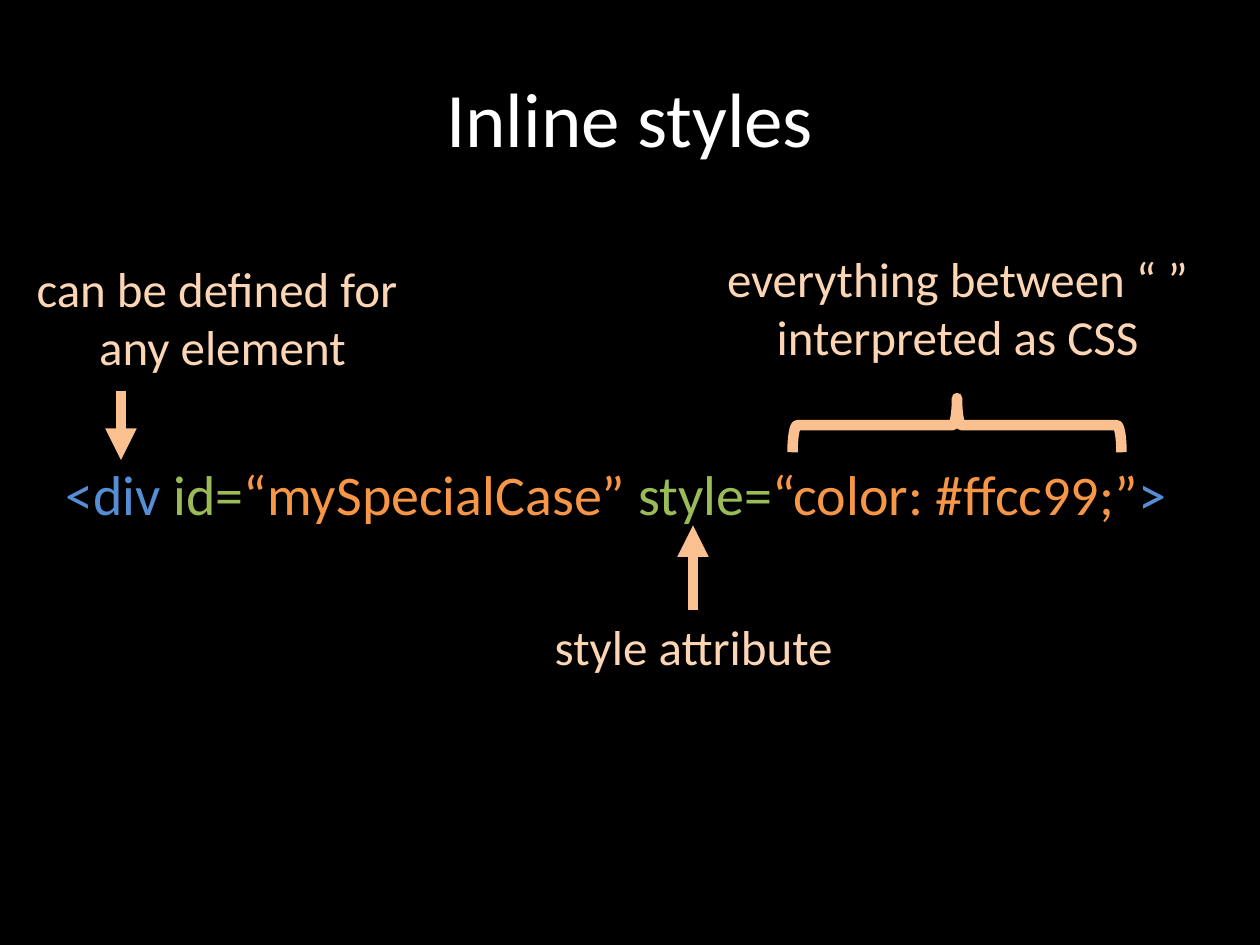
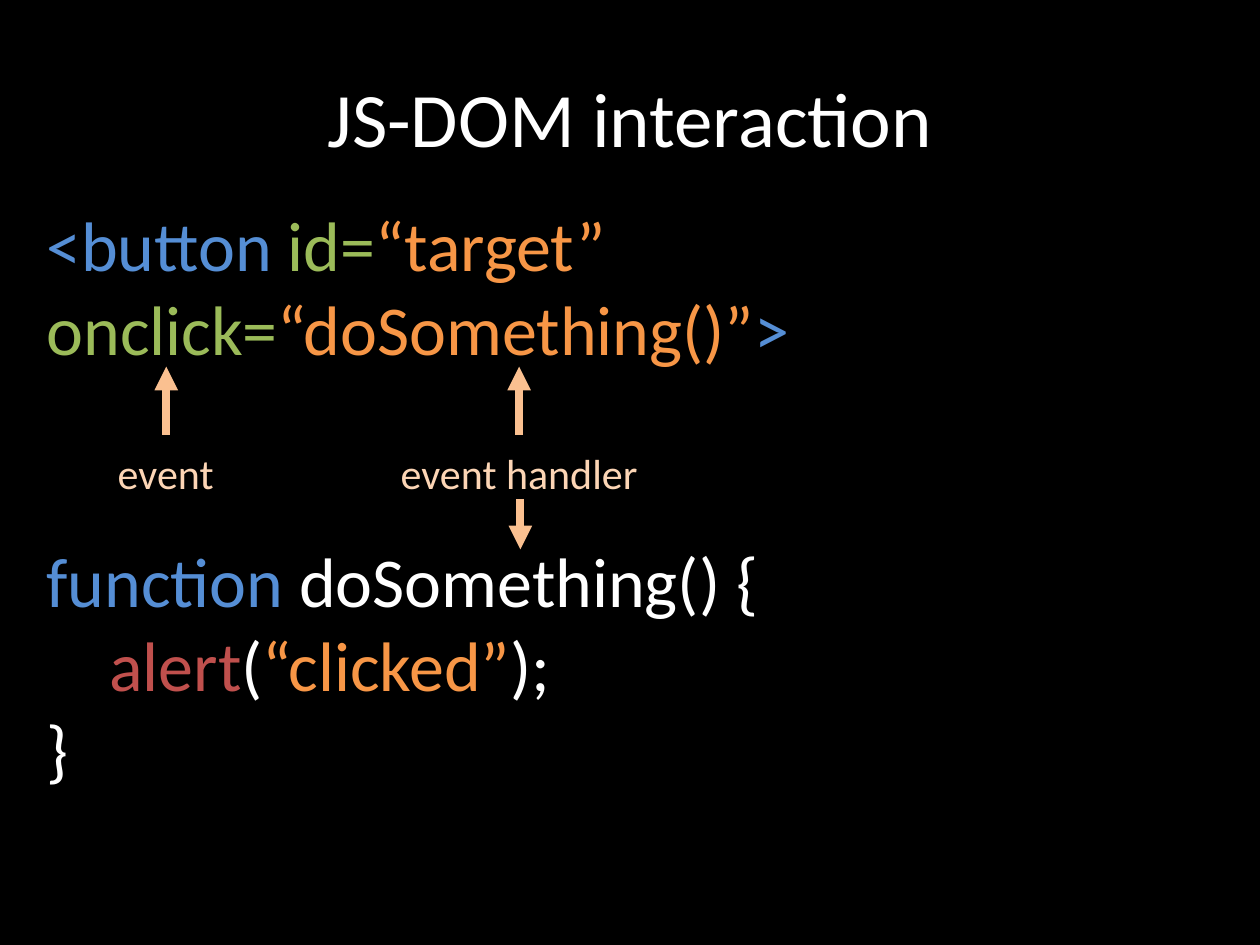
"""Build two dark code-annotation slides: inline styles and JS-DOM interaction."""
from dataclasses import dataclass

from lxml import etree
from pptx import Presentation
from pptx import util as u
from pptx.dml.color import RGBColor
from pptx.enum import shapes, text
from pptx.oxml import ns

FONT = "Calibri"
COLORS = {
    "background": "000000",
    "plain": "FFFFFF",
    "tag": "558ED5",
    "attribute": "9BBB59",
    "string": "F79646",
    "call": "C0504D",
    "note": "FCD5B5",
    "pointer": "FAC090",
}


@dataclass(frozen=True)
class Frame:
    """Position and size in points."""
    left: float
    top: float
    width: float
    height: float

    def lengths(self) -> tuple:
        """Return the four lengths as Pt values."""
        return tuple(u.Pt(n) for n in (self.left, self.top, self.width, self.height))


@dataclass(frozen=True)
class CodeLine:
    """A paragraph of (colour name, wording) spans."""
    spans: tuple
    indent: float = 0
    space_before: float = 0


@dataclass(frozen=True)
class Note:
    """A centred label of one or more lines."""
    frame: Frame
    lines: tuple
    size: float


@dataclass(frozen=True)
class Arrow:
    """A vertical arrow from start to end."""
    x: float
    start: float
    end: float
    weight: float


def color(name: str) -> RGBColor:
    """Look up a named colour."""
    return RGBColor.from_string(COLORS[name])


def style(paragraph, size: float, color_name: str = "") -> None:
    """Set the font of a whole paragraph."""
    paragraph.font.name = FONT
    paragraph.font.size = u.Pt(size)
    if color_name:
        paragraph.font.color.rgb = color(color_name)


def add_page(deck, title: str):
    """Add a title-only slide with its title formatted."""
    page = deck.slides.add_slide(deck.slide_layouts[5])
    box = page.shapes.title
    box.left, box.top, box.width, box.height = Frame(36, 21.6, 648, 90).lengths()
    box.text_frame.text = title
    box.text_frame.vertical_anchor = text.MSO_ANCHOR.MIDDLE
    para = box.text_frame.paragraphs[0]
    para.alignment = text.PP_ALIGN.CENTER
    style(para, 44, "plain")
    return page


def add_paragraphs(page, frame: Frame, count: int, wrap: bool) -> list:
    """Add a text box that fits its text and return its paragraphs."""
    body = page.shapes.add_textbox(*frame.lengths()).text_frame
    body.word_wrap = wrap
    body.auto_size = text.MSO_AUTO_SIZE.SHAPE_TO_FIT_TEXT
    for _ in range(count - 1):
        body.add_paragraph()
    return list(body.paragraphs)


def add_code(page, frame: Frame, lines: tuple, size: float) -> None:
    """Add syntax-coloured code."""
    for para, line in zip(add_paragraphs(page, frame, len(lines), True), lines):
        style(para, size)
        para.space_before = u.Pt(line.space_before)
        if line.indent:
            para._p.get_or_add_pPr().set("marL", str(u.Pt(line.indent)))
        for color_name, wording in line.spans:
            span = para.add_run()
            span.text = wording
            span.font.color.rgb = color(color_name)


def add_note(page, note: Note) -> None:
    """Add a centred label."""
    paragraphs = add_paragraphs(page, note.frame, len(note.lines), False)
    for para, wording in zip(paragraphs, note.lines):
        para.text = wording
        para.alignment = text.PP_ALIGN.CENTER
        style(para, note.size, "note")


def add_arrow(page, arrow: Arrow) -> None:
    """Add a vertical line with a triangular head."""
    x = u.Pt(arrow.x)
    line = page.shapes.add_connector(
        shapes.MSO_CONNECTOR.STRAIGHT, x, u.Pt(arrow.start), x, u.Pt(arrow.end))
    line.line.color.rgb = color("pointer")
    line.line.width = u.Pt(arrow.weight)
    head = etree.SubElement(line.line._get_or_add_ln(), ns.qn("a:tailEnd"))
    head.set("type", "triangle")
    etree.SubElement(line._element.spPr, ns.qn("a:effectLst"))


def add_brace(page, frame: Frame) -> None:
    """Add a left brace turned to point upwards."""
    brace = page.shapes.add_shape(shapes.MSO_SHAPE.LEFT_BRACE, *frame.lengths())
    brace.rotation = 90
    brace.shadow.inherit = False
    brace.fill.background()
    brace.line.color.rgb = color("pointer")
    brace.line.width = u.Pt(6)


def build_inline_styles(deck) -> None:
    """Build the slide that explains the style attribute."""
    page = add_page(deck, "Inline styles")
    add_code(page, Frame(30.24, 259.2, 647.28, 46.08), (
        CodeLine((("tag", "<div "), ("attribute", "id="),
                  ("string", "“mySpecialCase” "), ("attribute", "style="),
                  ("string", "“color: #ffcc99;”"), ("tag", ">"))),
    ), 32)
    for note in (
        Note(Frame(12.24, 144, 229.68, 74.88), ("can be defined for ", "any element"), 28),
        Note(Frame(305.28, 348.48, 182.16, 41.04), ("style attribute",), 28),
        Note(Frame(406.8, 138.24, 280.8, 74.88),
             ("everything between “ ”", "interpreted as CSS"), 28),
    ):
        add_note(page, note)
    for arrow in (Arrow(69.12, 223.2, 262.8, 6), Arrow(396, 348.48, 300.24, 6)):
        add_arrow(page, arrow)
    add_brace(page, Frame(531.36, 149.04, 30.96, 187.92))


def build_dom_interaction(deck) -> None:
    """Build the slide that links an event to its handler."""
    page = add_page(deck, "JS-DOM interaction")
    add_code(page, Frame(19.44, 111.6, 682.56, 346.32), (
        CodeLine((("tag", "<button "), ("attribute", "id="),
                  ("string", "“target” "), ("attribute", "onclick="),
                  ("string", "“doSomething()”"), ("tag", ">"))),
        CodeLine((("tag", "function "), ("plain", "doSomething() {")), space_before=96),
        CodeLine((("call", "alert"), ("plain", "("),
                  ("string", "“clicked”"), ("plain", ");")), indent=36),
        CodeLine((("plain", "}"),)),
    ), 40)
    for note in (
        Note(Frame(221.04, 252, 151.2, 36), ("event handler",), 24),
        Note(Frame(59.76, 252, 69.84, 36), ("event",), 24),
    ):
        add_note(page, note)
    for arrow in (
        Arrow(296.64, 248.4, 209.52, 4.5),
        Arrow(95.04, 248.4, 209.52, 4.5),
        Arrow(297.36, 285.12, 313.92, 4.5),
    ):
        add_arrow(page, arrow)


def main() -> None:
    """Build and save the deck."""
    deck = Presentation()
    deck.slide_width, deck.slide_height = u.Pt(720), u.Pt(540)
    backdrop = deck.slide_master.background.fill
    backdrop.solid()
    backdrop.fore_color.rgb = color("background")
    build_inline_styles(deck)
    build_dom_interaction(deck)
    deck.save("out.pptx")


if __name__ == "__main__":
    main()
